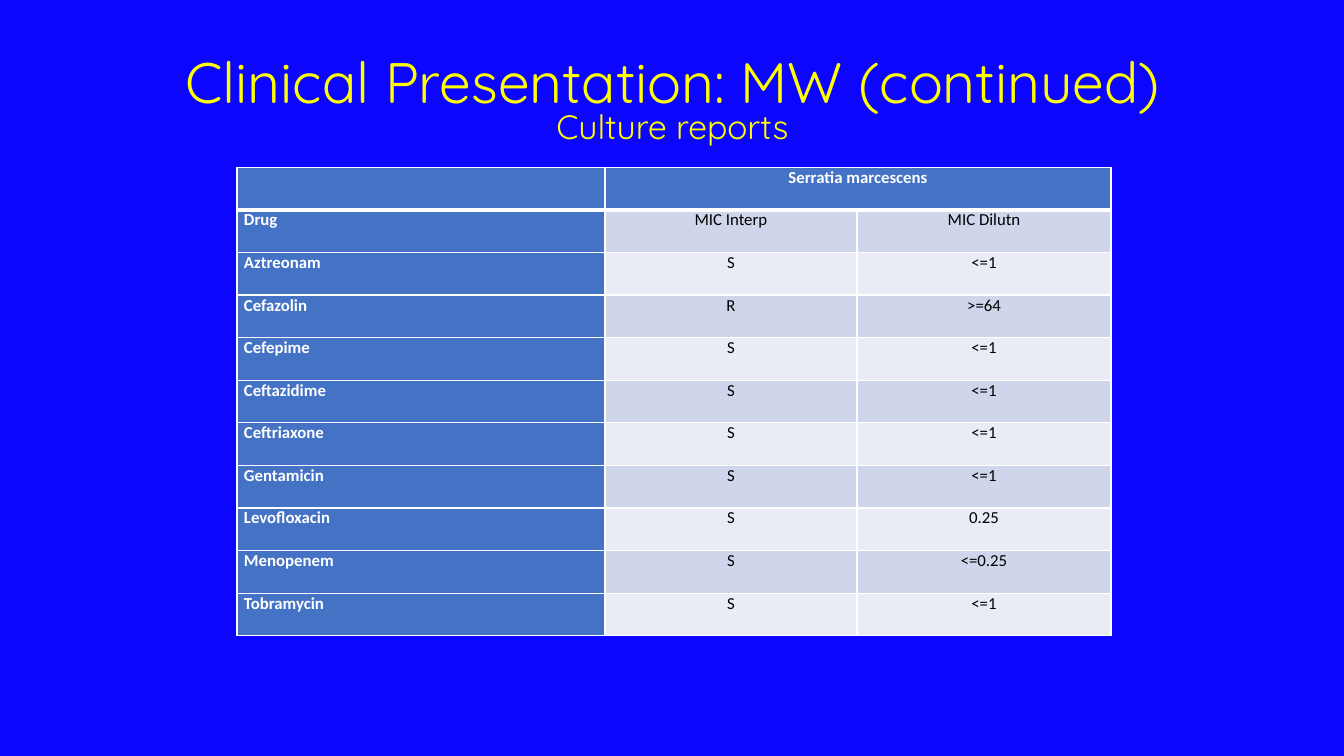
from lxml.etree import SubElement
from pptx import Presentation
from pptx.dml.color import RGBColor
from pptx.enum.text import MSO_ANCHOR, PP_ALIGN
from pptx.oxml.ns import qn
from pptx.util import Inches, Pt


def rgb(value):
    return RGBColor.from_string(value)


def apply(target, values):
    for name, value in values.items():
        setattr(target, name, value)


class SlideBuilder:
    HEADING = "4472C4"
    BANDS = ("E9EBF5", "CFD5EA")
    BORDER = "FFFFFF"
    HEAD_FONT = {"name": "Calibri", "size": Pt(12), "bold": True}
    BODY_FONT = {**HEAD_FONT, "bold": False}
    CELL_INSETS = {
        "margin_left": Inches(0.07),
        "margin_right": Inches(0.07),
        "margin_top": 0,
        "margin_bottom": 0,
    }

    def __init__(self, prs, background):
        self.slide = prs.slides.add_slide(prs.slide_layouts[6])
        fill = self.slide.background.fill
        fill.solid()
        fill.fore_color.rgb = rgb(background)

    def text(self, p, text, font, color, **paragraph):
        apply(p, paragraph)
        r = p.add_run()
        r.text = text
        apply(r.font, font)
        r.font.color.rgb = rgb(color)

    def title(self, box, lines, color):
        sp = self.slide.shapes.add_textbox(*map(Inches, box))
        tf = sp.text_frame
        apply(tf, {
            "word_wrap": True,
            "vertical_anchor": MSO_ANCHOR.MIDDLE,
            "margin_bottom": Inches(0.38),
        })
        for i, (text, size) in enumerate(lines):
            p = tf.add_paragraph() if i else tf.paragraphs[0]
            self.text(p, text, {"name": "Quicksand", "size": Pt(size)}, color,
                      alignment=PP_ALIGN.CENTER, line_spacing=0.8)

    def borders(self, cell, widths):
        tcPr = cell._tc.get_or_add_tcPr()
        for side, width in widths.items():
            ln = SubElement(tcPr, qn(f"a:ln{side}"), w=str(Pt(width)))
            solid = SubElement(ln, qn("a:solidFill"))
            SubElement(solid, qn("a:srgbClr"), val=self.BORDER)

    def cell(self, cell, text, row, col):
        heading = row == 0 or col == 0
        apply(cell, self.CELL_INSETS)
        self.borders(cell, {"L": 1, "R": 1, "T": 3 if row == 1 else 1,
                            "B": 3 if row == 0 else 1})
        cell.fill.solid()
        cell.fill.fore_color.rgb = rgb(self.HEADING if heading else self.BANDS[row % 2])
        if text:
            self.text(cell.text_frame.paragraphs[0], text,
                      self.HEAD_FONT if heading else self.BODY_FONT,
                      "FFFFFF" if heading else "000000",
                      alignment=PP_ALIGN.CENTER if col else PP_ALIGN.LEFT)

    def table(self, box, widths, rows):
        frame = self.slide.shapes.add_table(len(rows), len(widths), *map(Inches, box))
        table = frame.table
        for column, width in zip(table.columns, widths):
            column.width = Inches(width)
        for i, values in enumerate(rows):
            table.rows[i].height = Inches(box[3] / len(rows))
            for j, text in enumerate(values):
                self.cell(table.cell(i, j), text, i, j)
        table.cell(0, 1).merge(table.cell(0, 2))


CULTURE_ROWS = [
    ("", "Serratia marcescens", ""),
    ("Drug", "MIC Interp", "MIC Dilutn"),
    ("Aztreonam", "S", "<=1"),
    ("Cefazolin", "R", ">=64"),
    ("Cefepime", "S", "<=1"),
    ("Ceftazidime", "S", "<=1"),
    ("Ceftriaxone", "S", "<=1"),
    ("Gentamicin", "S", "<=1"),
    ("Levofloxacin", "S", "0.25"),
    ("Menopenem", "S", "<=0.25"),
    ("Tobramycin", "S", "<=1"),
]


def main():
    prs = Presentation()
    apply(prs, {"slide_width": Inches(13.33), "slide_height": Inches(7.5)})
    s = SlideBuilder(prs, "0C05FF")
    s.title((0.92, 0.46, 11.5, 1.45),
            [("Clinical Presentation: MW (continued)", 40.7), ("Culture reports", 24.1)],
            "FFFF00")
    s.table((2.35, 1.66, 8.67, 4.65), (3.65, 2.5, 2.52), CULTURE_ROWS)
    prs.save("out.pptx")


if __name__ == "__main__":
    main()
